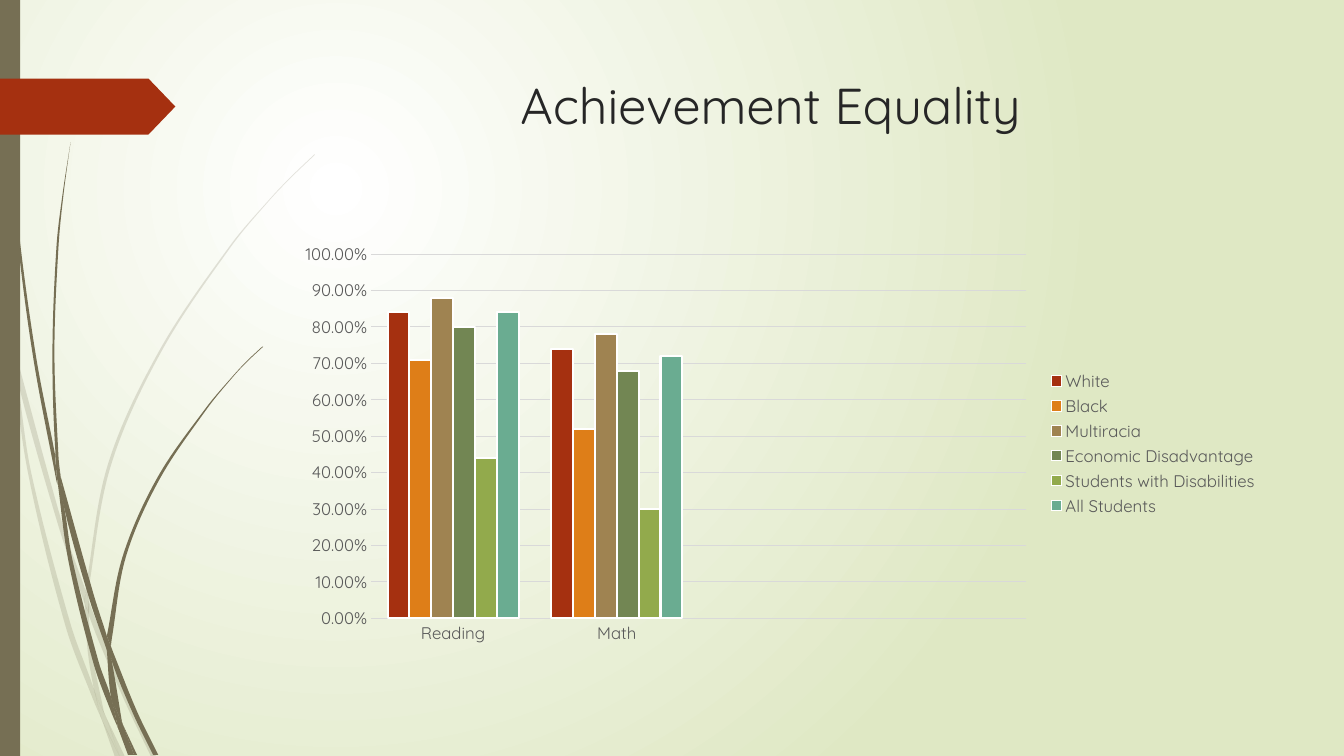
import lxml.etree
import pptx
import pptx.chart.data
import pptx.dml.color
import pptx.enum.chart
import pptx.enum.shapes
import pptx.enum.text
import pptx.oxml.ns
import pptx.util

RGB = pptx.dml.color.RGBColor
WHITE = RGB(0xFF, 0xFF, 0xFF)
SAGE = RGB(0xDF, 0xE8, 0xC4)
BARK = RGB(0x76, 0x6F, 0x54)
RUST = RGB(0xA5, 0x30, 0x10)
INK = RGB(0x26, 0x26, 0x26)
GRAY = RGB(0x59, 0x59, 0x59)
RULE = RGB(0xD9, 0xD9, 0xD9)
ORANGE = RGB(0xDE, 0x7E, 0x18)
TAN = RGB(0x9F, 0x83, 0x51)
MOSS = RGB(0x72, 0x86, 0x53)
LIME = RGB(0x92, 0xAA, 0x4C)
TEAL = RGB(0x6A, 0xAC, 0x91)
FONT = "Quicksand"
WIDTH, HEIGHT = 13.33, 7.5

PALE_BLADES = [
    ([(.11, 3.5), (.09, 3.22), (0, 2.82)], [(0, 2.99), (.1, 3.44), (.11, 3.5)]),
    ([(.14, 3.45), (.17, 3.76), (.58, 5.22), (.84, 5.99)], [(.85, 5.86), (.62, 5.2), (.14, 3.45)]),
    ([(.88, 5.96), (.88, 6.1), (1.23, 6.94), (1.5, 7.51)],
     [(1.55, 7.51), (1.27, 6.92), (.92, 6.07), (.88, 5.96)]),
    ([(1.05, 7.11), (1.19, 7.51)], [(1.24, 7.51), (1.05, 7.11)]),
    ([(.11, 3.5), (.28, 4.7), (.65, 6.21), (.92, 6.93), (1.01, 7.14)],
     [(.99, 7.07), (.93, 6.83), (.7, 6.19), (.31, 4.69), (.17, 3.76), (.11, 3.5)]),
    ([(.84, 5.99), (.87, 6.46), (.93, 6.83), (.96, 6.92), (1.05, 7.11)],
     [(1.03, 7.06), (.91, 6.46), (.88, 6.1), (.88, 6.08), (.84, 5.99)]),
    ([(3.12, 1.53), (2.89, 1.75), (2.68, 1.97), (2.28, 2.44), (1.58, 3.48), (1.07, 4.61),
      (.85, 5.84), (.85, 5.86)],
     [(.88, 5.96), (.88, 5.84), (1.1, 4.62), (1.6, 3.49), (2.29, 2.45), (2.68, 1.98),
      (2.9, 1.75), (3.12, 1.54)]),
    ([(1.01, 7.14), (1.14, 7.51)], [(1.19, 7.51), (1.01, 7.14)]),
    ([(.85, 5.86), (.84, 5.99), (.88, 6.08)], [(.88, 6.1), (.88, 5.96), (.85, 5.86)]),
    ([(.93, 6.83), (.99, 7.07), (1.01, 7.14), (1.19, 7.51)],
     [(1.19, 7.51), (1.05, 7.11), (.96, 6.92), (.93, 6.83)]),
]
DARK_BLADES = [
    ([(.03, 0), (.04, .48), (.07, 1.1), (.17, 2.33), (.33, 3.55), (.56, 4.77), (.57, 4.81)],
     [(.55, 4.57), (.55, 4.53), (.36, 3.55), (.19, 2.32), (.08, 1.09), (.05, .48), (.04, 0)]),
    ([(.6, 4.72), (.64, 5.05), (.88, 5.92), (1.06, 6.45)],
     [(1.06, 6.33), (1.06, 6.31), (.93, 5.9), (.6, 4.72)]),
    ([(1.1, 6.41), (1.11, 6.56), (1.32, 7.08), (1.52, 7.49)],
     [(1.57, 7.49), (1.36, 7.06), (1.13, 6.49), (1.1, 6.41)]),
    ([(.57, 4.77), (.68, 5.57), (.93, 6.59), (1.11, 7.08), (1.17, 7.22)],
     [(1.16, 7.17), (1.1, 6.91), (.98, 6.57), (.72, 5.56), (.64, 5.05), (.57, 4.77)]),
    ([(.7, 1.41), (.62, 1.93), (.56, 2.45), (.52, 3.49), (.55, 4.49), (.6, 4.72)],
     [(.6, 4.72), (.58, 4.53), (.54, 3.49), (.58, 2.45), (.63, 1.93), (.7, 1.41)]),
    ([(1.22, 7.19), (1.33, 7.49)], [(1.36, 7.49), (1.22, 7.19)]),
    ([(.55, 4.49), (.55, 4.53), (.57, 4.77), (.64, 5.05)], [(.6, 4.72), (.55, 4.49)]),
    ([(2.6, 3.44), (2.45, 3.58), (2.31, 3.73), (2.04, 4.05), (1.56, 4.74), (1.22, 5.51),
      (1.06, 6.31)],
     [(1.1, 6.41), (1.11, 6.33), (1.25, 5.52), (1.58, 4.76), (2.05, 4.06), (2.31, 3.74),
      (2.45, 3.59), (2.61, 3.44)]),
    ([(1.17, 7.22), (1.27, 7.49)], [(1.31, 7.49), (1.17, 7.22)]),
    ([(1.06, 6.45), (1.1, 6.91), (1.16, 7.06), (1.22, 7.19)],
     [(1.21, 7.16), (1.11, 6.56), (1.09, 6.51), (1.06, 6.45)]),
    ([(1.06, 6.31), (1.06, 6.45), (1.11, 6.56)], [(1.1, 6.41), (1.06, 6.31)]),
    ([(1.1, 6.91), (1.16, 7.17), (1.17, 7.22), (1.3, 7.49)],
     [(1.33, 7.49), (1.22, 7.19), (1.16, 7.06), (1.1, 6.91)]),
]
GROUPS = ["Reading", "Math", "", ""]
SERIES = [
    ("White", (.84, .74), RUST),
    ("Black", (.71, .52), ORANGE),
    ("Multiracia", (.88, .78), TAN),
    ("Economic Disadvantage", (.8, .68), MOSS),
    ("Students with Disabilities", (.44, .3), LIME),
    ("All Students", (.84, .72), TEAL),
]


def share(left, top, width, height):
    """Turn percentages of the slide into a box of lengths."""
    return [pptx.util.Inches(v * side / 100) for v, side in
            zip((left, top, width, height), (WIDTH, HEIGHT) * 2)]


def paint(sp, color):
    """Give a shape a flat fill without line or shadow."""
    sp.shadow.inherit = False
    sp.fill.solid()
    sp.fill.fore_color.rgb = color
    sp.line.fill.background()


def style_font(font, size, color):
    """Set typeface, size and colour of a font."""
    font.name = FONT
    font.size = pptx.util.Pt(size)
    font.color.rgb = color


def curves(knots):
    """Return the Bézier control points and end of each span through the knots."""
    spans = list(zip(knots, knots[1:]))
    gaps = [abs(b - a) for a, b in spans]
    slopes = [(b - a) / gap for (a, b), gap in zip(spans, gaps)]
    inner = [(c - a) / (g + h) for a, c, g, h in zip(knots, knots[2:], gaps, gaps[1:])]
    tangents = [slopes[0], *inner, slopes[-1]]
    return [(a + m * gap / 3, b - n * gap / 3, b)
            for (a, b), gap, m, n in zip(spans, gaps, tangents, tangents[1:])]


def add_background(slide):
    """Fill the slide with a circular gradient centred at upper left."""
    qn = pptx.oxml.ns.qn
    fill = slide.background.fill
    fill.gradient()
    for stop, color in zip(fill.gradient_stops, (WHITE, SAGE)):
        stop.color.rgb = color
    grad = slide._element.find(".//" + qn("a:gradFill"))
    grad.remove(grad.find(qn("a:lin")))
    circle = lxml.etree.SubElement(grad, qn("a:path"))
    circle.set("path", "circle")
    focus = lxml.etree.SubElement(circle, qn("a:fillToRect"))
    for side, value in zip("ltrb", (50000, 50000, 100000, 100000)):
        focus.set(side, str(value))


def add_blades(slide, box, blades, opacity):
    """Draw grass blades from the box corner, each between two curved edges."""
    qn = pptx.oxml.ns.qn
    scale = pptx.util.Inches(1)
    for blade in blades:
        down, up = ([complex(box[0] + x * scale, box[1] + y * scale) for x, y in edge]
                    for edge in blade)
        points = [(k.real, k.imag) for k in down + up]
        builder = slide.shapes.build_freeform(*points[0])
        builder.add_line_segments(points[1:])
        sp = builder.convert_to_shape()
        paint(sp, BARK)
        corner = complex(sp.left, sp.top)
        spans = curves(down) + [(down[-1], up[0], up[0])] + curves(up)
        for line, span in zip(sp._element.findall(".//" + qn("a:lnTo")), spans):
            line.tag = qn("a:cubicBezTo")
            line.remove(line[0])
            for knot in span:
                pt = lxml.etree.SubElement(line, qn("a:pt"))
                pt.set("x", str(round((knot - corner).real)))
                pt.set("y", str(round((knot - corner).imag)))
        if opacity < 100:
            color = sp._element.spPr.find(".//" + qn("a:srgbClr"))
            lxml.etree.SubElement(color, qn("a:alpha")).set("val", str(opacity * 1000))


def add_edge(slide, box):
    """Draw the side bar and the arrow tag across it."""
    left, top, width, height = box
    shapes = pptx.enum.shapes.MSO_SHAPE
    bar = slide.shapes.add_shape(shapes.RECTANGLE, left, top, int(width * .115), height)
    paint(bar, BARK)
    tag = slide.shapes.add_shape(shapes.PENTAGON, left, top + int(height * .104),
                                 width, int(height * .074))
    tag.adjustments[0] = .48
    paint(tag, RUST)


def add_title(slide, box):
    """Write the centred slide title."""
    tf = slide.shapes.add_textbox(*box).text_frame
    tf.word_wrap = True
    tf.vertical_anchor = pptx.enum.text.MSO_ANCHOR.TOP
    p = tf.paragraphs[0]
    p.text = "Achievement Equality "
    p.alignment = pptx.enum.text.PP_ALIGN.CENTER
    style_font(p.runs[0].font, 36, INK)


def add_scores(slide, box):
    """Chart the scores of each student group by subject."""
    kinds = pptx.enum.chart
    data = pptx.chart.data.CategoryChartData(number_format="0.00%")
    data.categories = GROUPS
    for name, values, _ in SERIES:
        data.add_series(name, values + (None, None))
    chart = slide.shapes.add_chart(kinds.XL_CHART_TYPE.COLUMN_CLUSTERED, *box, data).chart
    style_font(chart.font, 12, GRAY)
    chart.has_title = False
    chart.has_legend = True
    chart.legend.position = kinds.XL_LEGEND_POSITION.RIGHT
    chart.legend.include_in_layout = False
    style_font(chart.legend.font, 12, GRAY)
    plot = chart.plots[0]
    plot.gap_width, plot.overlap, plot.vary_by_categories = 150, 0, False
    for series, (_, _, color) in zip(plot.series, SERIES):
        series.format.fill.solid()
        series.format.fill.fore_color.rgb = color
        series.format.line.color.rgb = WHITE
        series.format.line.width = pptx.util.Pt(1.5)
    cat, val = chart.category_axis, chart.value_axis
    for axis in (cat, val):
        axis.major_tick_mark = axis.minor_tick_mark = kinds.XL_TICK_MARK.NONE
        style_font(axis.tick_labels.font, 12, GRAY)
    val.minimum_scale, val.maximum_scale, val.major_unit = 0, 1, .1
    val.tick_labels.number_format = "0.00%"
    val.tick_labels.number_format_is_linked = False
    val.format.line.fill.background()
    for line in (cat.format.line, val.major_gridlines.format.line):
        line.color.rgb = RULE
        line.width = pptx.util.Pt(.75)


def main():
    """Build and save the slide."""
    prs = pptx.Presentation()
    prs.slide_width, prs.slide_height = pptx.util.Inches(WIDTH), pptx.util.Inches(HEIGHT)
    slide = prs.slides.add_slide(prs.slide_layouts[6])
    add_background(slide)
    edge = share(0, 0, 13.05, 100)
    add_blades(slide, edge, PALE_BLADES, 20)
    add_blades(slide, edge, DARK_BLADES, 100)
    add_edge(slide, edge)
    add_title(slide, share(21.27, 9.13, 73.14, 18.67))
    add_scores(slide, share(21.27, 31.13, 73.14, 55.07))
    prs.save("out.pptx")


if __name__ == "__main__":
    main()
